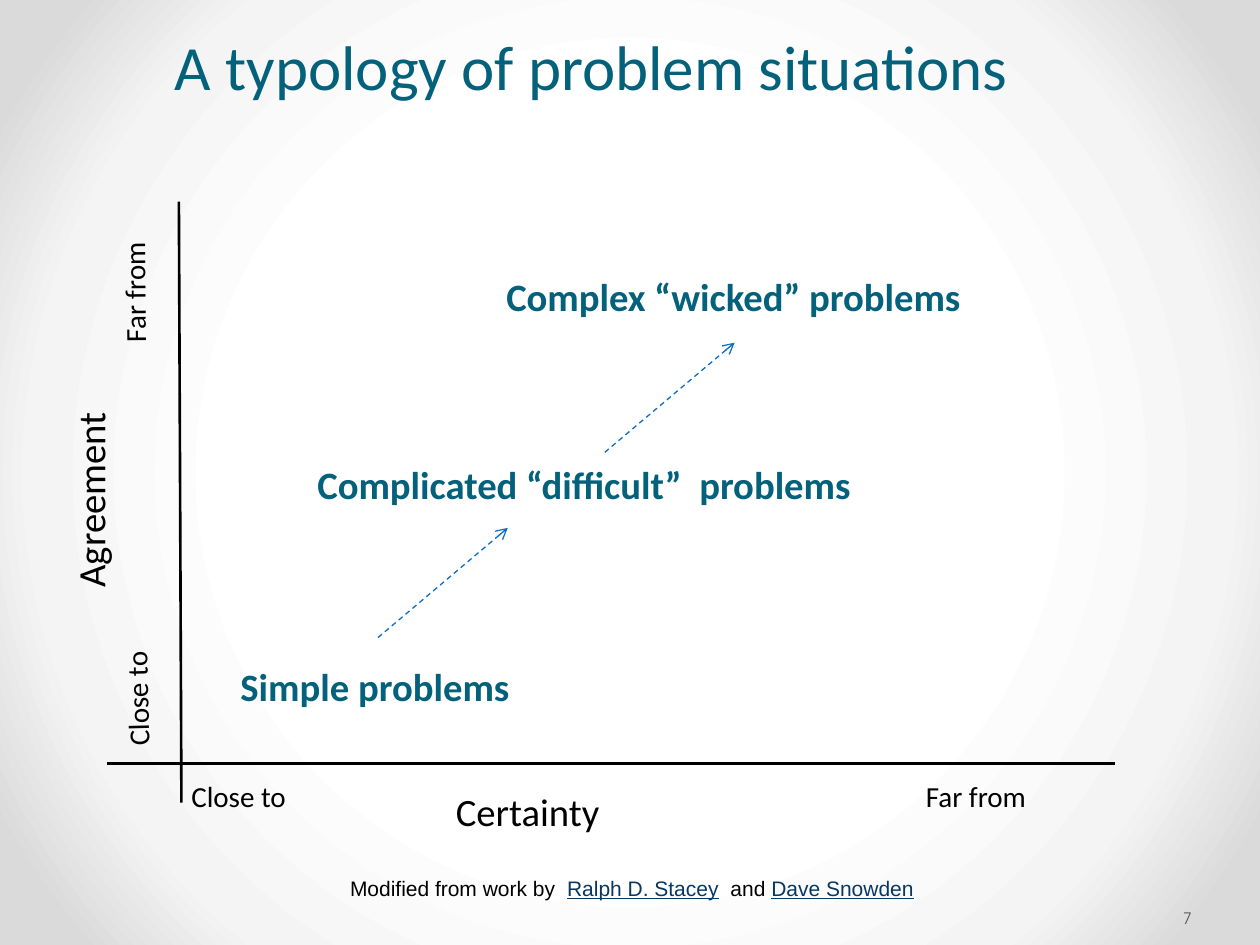
from pptx import Presentation
from pptx.dml.color import RGBColor
from pptx.enum.dml import MSO_LINE
from pptx.enum.shapes import MSO_CONNECTOR
from pptx.enum.text import MSO_ANCHOR
from pptx.oxml import parse_xml
from pptx.oxml.ns import nsdecls
from pptx.util import Inches, Pt
from lxml.etree import SubElement

BLACK, TEAL, BLUE, LINK = "000000", "04617B", "0A6DC6", "073763"
color = RGBColor.from_string


def add_text(text, left, top, width, height, size, text_color=BLACK,
             bold=False, rotation=0, font="Calibri"):
    box = slide.shapes.add_textbox(
        Inches(left), Inches(top), Inches(width), Inches(height))
    box.rotation = rotation
    box.text_frame.word_wrap = True
    paragraph = box.text_frame.paragraphs[0]
    paragraph.text = text
    paragraph.font.name = font
    paragraph.font.size = Pt(size)
    paragraph.font.bold = bold
    paragraph.font.color.rgb = color(text_color)
    return box


def add_line(x1, y1, x2, y2, line_color, width):
    connector = slide.shapes.add_connector(
        MSO_CONNECTOR.STRAIGHT, Inches(x1), Inches(y1), Inches(x2), Inches(y2))
    connector.line.color.rgb = color(line_color)
    connector.line.width = Pt(width)
    SubElement(connector._element.spPr, A + "effectLst")
    return connector


A = "{http://schemas.openxmlformats.org/drawingml/2006/main}"
presentation = Presentation()
presentation.slide_width = Inches(10)
presentation.slide_height = Inches(7.5)
slide = presentation.slides.add_slide(presentation.slide_layouts[6])

# Radial background
stops = "".join(
    f'<a:gs pos="{percent * 1000}"><a:srgbClr val="{stop_color}"/></a:gs>'
    for percent, stop_color in [(50, "FFFFFF"), (76, "F4F4F4"), (92, "DADADA")])
slide.element.cSld.insert(0, parse_xml(
    f'<p:bg {nsdecls("p", "a")}><p:bgPr><a:gradFill rotWithShape="1">'
    f'<a:gsLst>{stops}</a:gsLst><a:path path="circle">'
    '<a:fillToRect l="50000" t="50000" r="50000" b="50000"/></a:path>'
    '</a:gradFill><a:effectLst/></p:bgPr></p:bg>'))

# Title
add_text("A typology of problem situations", 1.29, 0.17, 7.88, 1.01, 36, TEAL)

# Axes
add_line(1.42, 1.6, 1.44, 6.37, BLACK, 1.5)
add_line(0.85, 6.06, 8.85, 6.06, BLACK, 1.5)

# Axis names and ends
for text, left, top, width, height, size, rotation in [
    ("Certainty", 3.52, 6.2, 2.5, 0.47, 22.1, 0),
    ("Close to", 1.42, 6.13, 1.75, 0.38, 16.6, 0),
    ("Far from", 7.25, 6.13, 1.75, 0.38, 16.6, 0),
    ("Agreement", -0.44, 3.37, 2.31, 0.47, 22.1, 270),
    ("Close to", 0.27, 5.02, 1.62, 0.38, 16.6, 268.6),
    ("Far from", 0.45, 2.01, 1.23, 0.38, 16.6, 269.5),
]:
    add_text(text, left, top, width, height, size, rotation=rotation)

# Problem types
for text, left, top, width in [
    ("Simple problems", 1.81, 5.21, 2.89),
    ("Complicated “difficult”  problems", 2.42, 3.61, 5.68),
    ("Complex “wicked” problems", 3.92, 2.12, 5.44),
]:
    add_text(text, left, top, width, 0.47, 22.1, TEAL, bold=True)

# Dashed arrows from each type to the next
for x, y in [(3, 5.06), (4.8, 3.59)]:
    arrow = add_line(x, y, x + 1.03, y - 0.87, BLUE, 0.75)
    arrow.line.dash_style = MSO_LINE.DASH
    SubElement(arrow.line._get_or_add_ln(), A + "tailEnd", type="arrow")

# Attribution
credit = add_text("Modified from work by  ", 2.68, 6.9, 5.16, 0.3, 12, font="Arial")
for text, is_name in [("Ralph D. Stacey", True), ("  and ", False), ("Dave Snowden", True)]:
    run = credit.text_frame.paragraphs[0].add_run()
    run.text = text
    if is_name:
        run.font.underline = True
        run.font.color.rgb = color(LINK)

# Slide number
number = add_text("7", 9.36, 7.09, 0.61, 0.4, 9, "595959", font="TeX Gyre Adventor")
number.text_frame.vertical_anchor = MSO_ANCHOR.MIDDLE
number.text_frame.margin_left = Inches(0.03)
number.text_frame.margin_right = Inches(0.05)

presentation.save("out.pptx")
